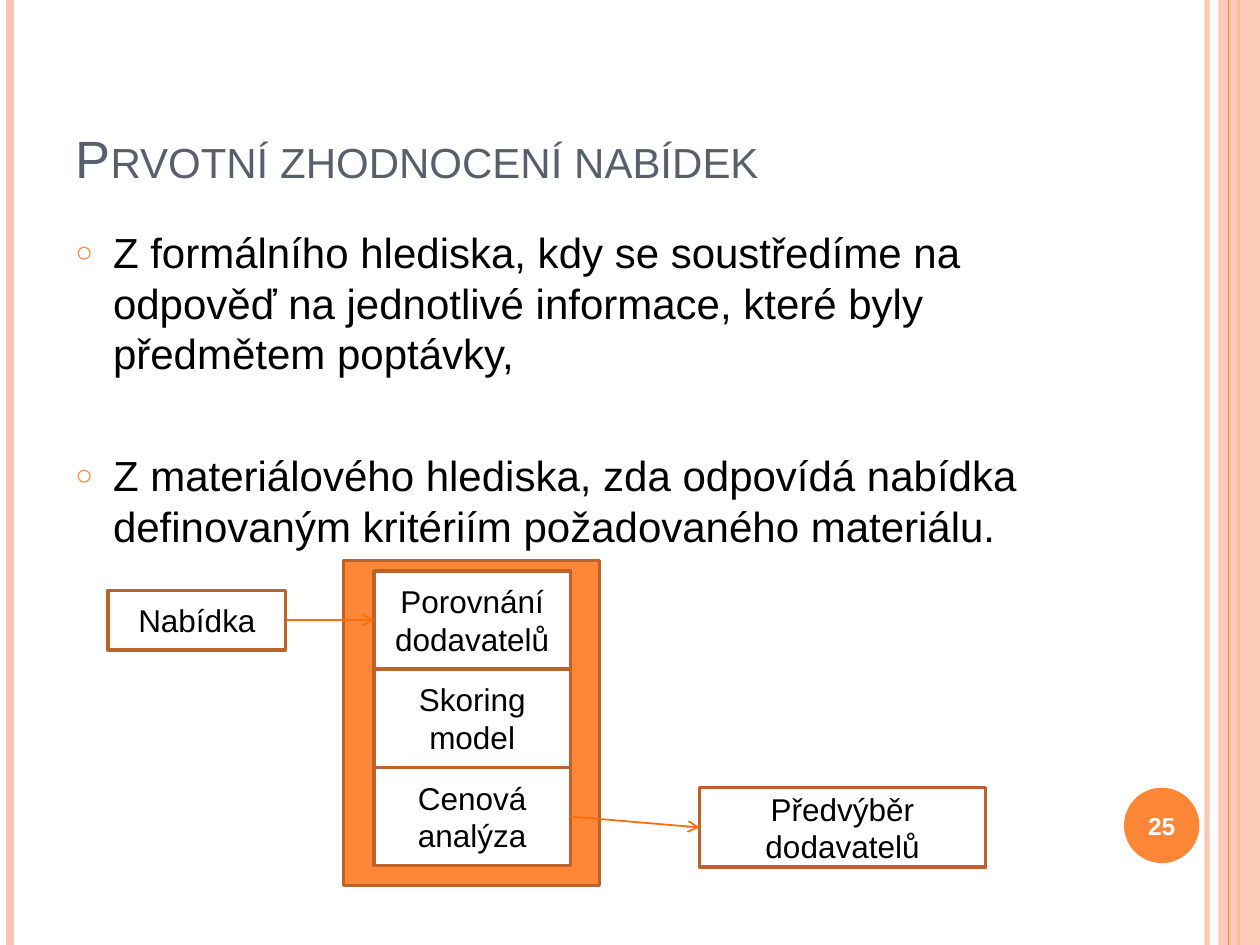
from pptx import Presentation
from pptx import util as u
from pptx.dml import color
from pptx.enum import shapes, text
from pptx.oxml.ns import qn
from lxml import etree

Cm, Pt = u.Cm, u.Pt
ORANGE, PEACH, BROWN, ARROW = "FE8637", "FEC3AE", "BC6329", "FF6B0A"
WHITE, BLACK, SLATE = "FFFFFF", "000000", "575F6D"
RECT, OVAL = shapes.MSO_SHAPE.RECTANGLE, shapes.MSO_SHAPE.OVAL


def rgb(value):
    return color.RGBColor.from_string(value)


def add_xml(parent, tag, **attrs):
    return etree.SubElement(parent, qn(tag), {k: str(v) for k, v in attrs.items()})


def set_alpha(fill_owner, percent):
    """Make the solid fill directly inside the given element partly transparent."""
    clr = fill_owner.find(qn("a:solidFill"))[0]
    add_xml(clr, "a:alpha", val=percent * 1000)


def add_run(p, content, size, hex_color, bold=None):
    r = p.add_run()
    r.text = content
    r.font.name = "Arial"
    r.font.size = Pt(size)
    r.font.bold = bold
    r.font.color.rgb = rgb(hex_color)
    return r


def add_box(s, box, fill, line=None, lines=(), kind=RECT, size=18,
            hex_color=BLACK, bold=None):
    """Add a filled shape with one centred paragraph for each of the lines."""
    sp = s.shapes.add_shape(kind, *map(Cm, box))
    sp.shadow.inherit = False
    sp.fill.solid()
    sp.fill.fore_color.rgb = rgb(fill)
    if line:
        sp.line.color.rgb = rgb(line)
        sp.line.width = Pt(2)
    else:
        sp.line.fill.background()
    tf = sp.text_frame
    tf.vertical_anchor = text.MSO_ANCHOR.MIDDLE
    for i, content in enumerate(lines):
        p = tf.add_paragraph() if i else tf.paragraphs[0]
        p.alignment = text.PP_ALIGN.CENTER
        add_run(p, content, size, hex_color, bold)
    return sp


def add_line(s, x1, y1, x2, y2, hex_color, width):
    c = s.shapes.add_connector(shapes.MSO_CONNECTOR.STRAIGHT,
                               Cm(x1), Cm(y1), Cm(x2), Cm(y2))
    c.line.color.rgb = rgb(hex_color)
    c.line.width = Pt(width)
    add_xml(c._element.spPr, "a:effectLst")
    return c


def add_arrow(s, start, end):
    """Join the right side of one box to the left side of another."""
    c = add_line(s, 0, 0, 1, 1, ARROW, 1)
    c.begin_connect(start, 3)
    c.end_connect(end, 1)
    add_xml(c.line._get_or_add_ln(), "a:tailEnd", type="arrow")


def add_side_stripes(s, width, height):
    def stripe(x, hex_color, weight):
        return add_line(s, x, 0, x, height, hex_color, weight)

    inner = stripe(width - 1.07, PEACH, 3)
    set_alpha(inner.line._get_or_add_ln(), 93)
    stripe(0.2, PEACH, 4.5)
    stripe(width - 0.43, ORANGE, 1.5)
    band = add_box(s, (width - 0.84, 0, 0.84, height), PEACH)
    set_alpha(band._element.spPr, 87)
    stripe(width - 0.63, ORANGE, 0.75)


def add_page_number(s, x, y, diameter, number):
    sp = add_box(s, (x, y, diameter, diameter), ORANGE, lines=[number],
                 kind=OVAL, size=14, hex_color=WHITE, bold=True)
    tf = sp.text_frame
    tf.margin_left = tf.margin_right = tf.margin_top = tf.margin_bottom = 0


def place_title(s, box, content):
    sp = s.shapes.title
    sp.left, sp.top, sp.width, sp.height = map(Cm, box)
    tf = sp.text_frame
    tf.vertical_anchor = text.MSO_ANCHOR.BOTTOM
    p = tf.paragraphs[0]
    p.alignment = text.PP_ALIGN.LEFT
    r = add_run(p, content, 30, SLATE)
    r.font._element.set("cap", "small")


def add_bullets(s, box, items):
    tf = s.shapes.add_textbox(*map(Cm, box)).text_frame
    tf.word_wrap = True
    for i, content in enumerate(items):
        p = tf.add_paragraph() if i else tf.paragraphs[0]
        p.space_before = Pt(41 if i else 6)
        pPr = p._p.get_or_add_pPr()
        pPr.set("marL", str(Cm(0.76)))
        pPr.set("indent", str(-Cm(0.76)))
        add_xml(add_xml(pPr, "a:buClr"), "a:srgbClr", val=ORANGE)
        add_xml(pPr, "a:buSzPct", val=70000)
        add_xml(pPr, "a:buFont", typeface="Arial")
        add_xml(pPr, "a:buChar", char="○")
        add_run(p, content, 24, BLACK)


def add_selection_diagram(s, x, y):
    """Draw offer -> stacked evaluation steps -> preselection."""
    step_w, step_h = 3.96, 1.98
    add_box(s, (x + 4.75, y, 5.16, 6.55), ORANGE, BROWN)
    offer = add_box(s, (x, y + 0.6, 3.58, 1.2), WHITE, BROWN, ["Nabídka"])
    step_lines = [["Porovnání", "dodavatelů"], ["Skoring model"], ["Cenová analýza"]]
    steps = [add_box(s, (x + 5.36, y + 0.21 + i * step_h, step_w, step_h),
                     WHITE, BROWN, lines)
             for i, lines in enumerate(step_lines)]
    preselection = add_box(s, (x + 11.92, y + 4.58, 5.77, 1.6), WHITE, BROWN,
                           ["Předvýběr dodavatelů"])
    add_arrow(s, offer, steps[0])
    add_arrow(s, steps[-1], preselection)


def main():
    width, height = 25.4, 19.05
    prs = Presentation()
    prs.slide_width, prs.slide_height = Cm(width), Cm(height)
    s = prs.slides.add_slide(prs.slide_layouts[5])
    s.background.fill.solid()
    s.background.fill.fore_color.rgb = rgb(WHITE)

    add_side_stripes(s, width, height)
    add_page_number(s, 22.66, 15.88, 1.52, "25")
    place_title(s, (1.27, 0.76, 20.75, 3.18), "Prvotní zhodnocení nabídek")
    add_bullets(s, (1.27, 4.45, 20.75, 13.54), [
        "Z formálního hlediska, kdy se soustředíme na odpověď na jednotlivé "
        "informace, které byly předmětem poptávky,",
        "Z materiálového hlediska, zda odpovídá nabídka definovaným kritériím "
        "požadovaného materiálu.",
    ])
    add_selection_diagram(s, 2.18, 11.3)
    prs.save("out.pptx")


if __name__ == "__main__":
    main()
